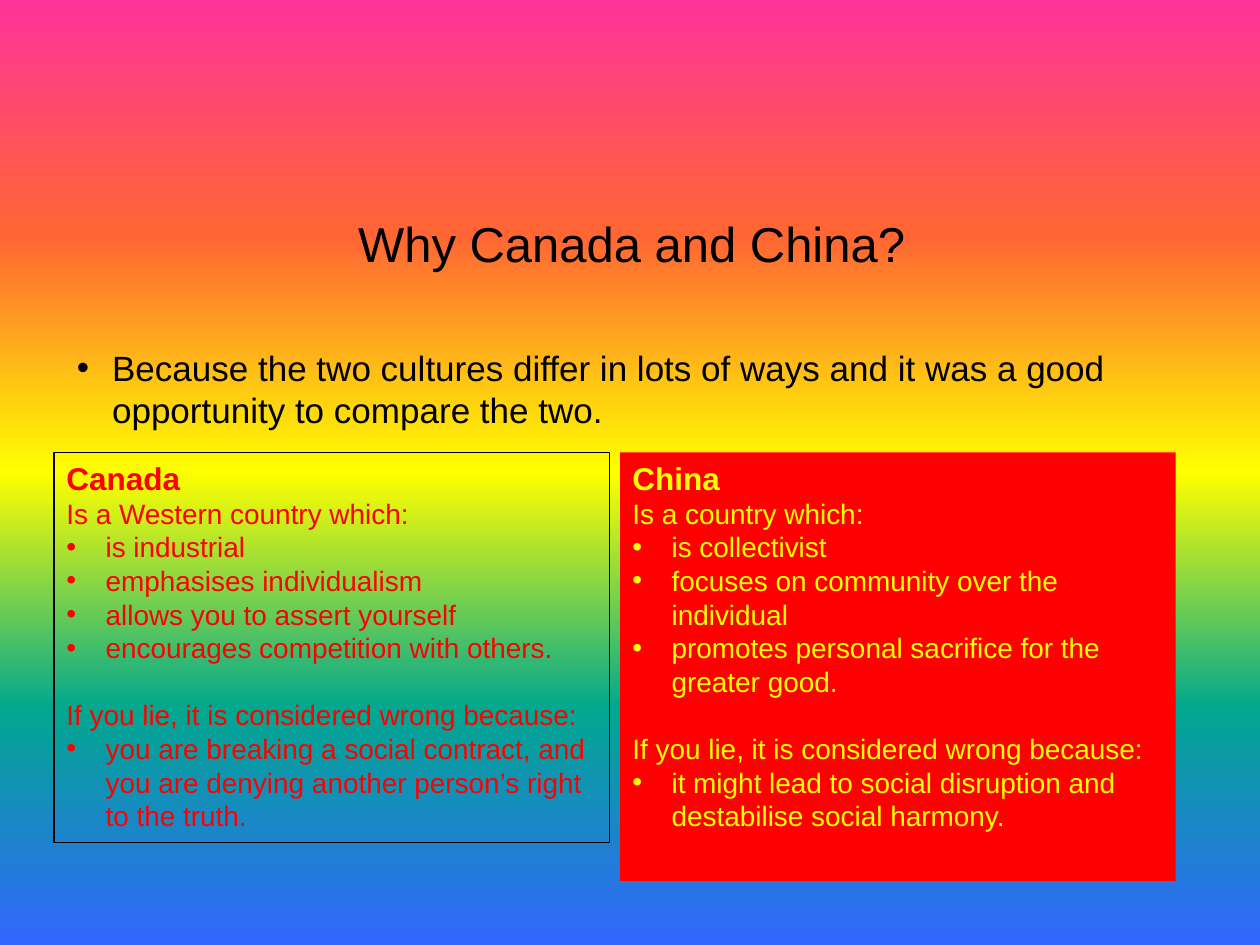
from lxml import etree
from pptx import Presentation
from pptx.dml.color import RGBColor
from pptx.enum.shapes import MSO_SHAPE
from pptx.enum.text import MSO_ANCHOR, PP_ALIGN
from pptx.oxml.ns import qn
from pptx.util import Cm, Pt

RECTANGLE = MSO_SHAPE.RECTANGLE
TOP, BOTTOM = MSO_ANCHOR.TOP, MSO_ANCHOR.BOTTOM
LEFT, CENTER = PP_ALIGN.LEFT, PP_ALIGN.CENTER
FONT = "Arial"
COLORS = {"black": "000000", "red": "FF0000", "yellow": "FFFF00"}
RAINBOW = ["FF3399", "FF6633", "FFFF00", "01A78F", "3366FF"]


def add_text(paragraph, text, size, color, bold=False, align=LEFT):
    paragraph.alignment = align
    run = paragraph.add_run()
    run.text = text
    run.font.name = FONT
    run.font.size = Pt(size)
    run.font.bold = bold
    run.font.color.rgb = RGBColor.from_string(COLORS[color])


def add_bullet(paragraph, indent):
    properties = paragraph._p.get_or_add_pPr()
    properties.set("marL", str(indent))
    properties.set("indent", str(-indent))
    etree.SubElement(properties, qn("a:buFont")).set("typeface", FONT)
    etree.SubElement(properties, qn("a:buChar")).set("char", "•")


presentation = Presentation()
presentation.slide_width = Cm(25.4)
presentation.slide_height = Cm(19.05)
slide = presentation.slides.add_slide(presentation.slide_layouts[6])

# Rainbow background, evenly spaced from top to bottom
background_fill = slide.background.fill
background_fill.gradient()
background_fill.gradient_angle = 270
stop_list = slide._element.find(".//" + qn("a:gsLst"))
for old_stop in list(stop_list):
    stop_list.remove(old_stop)
for index, color in enumerate(RAINBOW):
    stop = etree.SubElement(stop_list, qn("a:gs"))
    stop.set("pos", str(index * 100000 // (len(RAINBOW) - 1)))
    etree.SubElement(stop, qn("a:srgbClr")).set("val", color)

# Title and reason
headings = [
    ("Why Canada and China?", 4.11, 1.63, 28, BOTTOM, CENTER, False),
    ("Because the two cultures differ in lots of ways and it was a good "
     "opportunity to compare the two.", 6.73, 2.39, 20, TOP, LEFT, True),
]
for text, top, height, size, anchor, align, bulleted in headings:
    shape = slide.shapes.add_textbox(Cm(1.3), Cm(top), Cm(22.86), Cm(height))
    frame = shape.text_frame
    frame.word_wrap = True
    frame.vertical_anchor = anchor
    frame.margin_top = frame.margin_bottom = Cm(0.25)
    add_text(frame.paragraphs[0], text, size, "black", align=align)
    if bulleted:
        add_bullet(frame.paragraphs[0], Cm(0.71))

# Country panels: name, left, height, text, fill, line, intro, traits, reason
LIE = "If you lie, it is considered wrong because:"
panels = [
    ("Canada", 1.09, 7.87, "red", None, "black",
     "Is a Western country which:",
     ["is industrial", "emphasises individualism",
      "allows you to assert yourself", "encourages competition with others."],
     "you are breaking a social contract, and you are denying another "
     "person’s right to the truth."),
    ("China", 12.5, 8.64, "yellow", "red", None,
     "Is a country which:",
     ["is collectivist", "focuses on community over the individual",
      "promotes personal sacrifice for the greater good."],
     "it might lead to social disruption and destabilise social harmony."),
]
for name, left, height, color, fill, line, intro, traits, reason in panels:
    shape = slide.shapes.add_shape(
        RECTANGLE, Cm(left), Cm(9.12), Cm(11.2), Cm(height))
    shape.shadow.inherit = False
    if fill:
        shape.fill.solid()
        shape.fill.fore_color.rgb = RGBColor.from_string(COLORS[fill])
    else:
        shape.fill.background()
    if line:
        shape.line.color.rgb = RGBColor.from_string(COLORS[line])
        shape.line.width = Pt(0.75)
    else:
        shape.line.fill.background()

    frame = shape.text_frame
    frame.word_wrap = True
    frame.vertical_anchor = TOP
    add_text(frame.paragraphs[0], name, 18, color, bold=True)
    for text in [intro, *traits, LIE, reason]:
        paragraph = frame.add_paragraph()
        add_text(paragraph, text, 16, color)
        if text == LIE:
            paragraph.space_before = Pt(19.2)
        elif text != intro:
            add_bullet(paragraph, Cm(0.79))

presentation.save("out.pptx")
